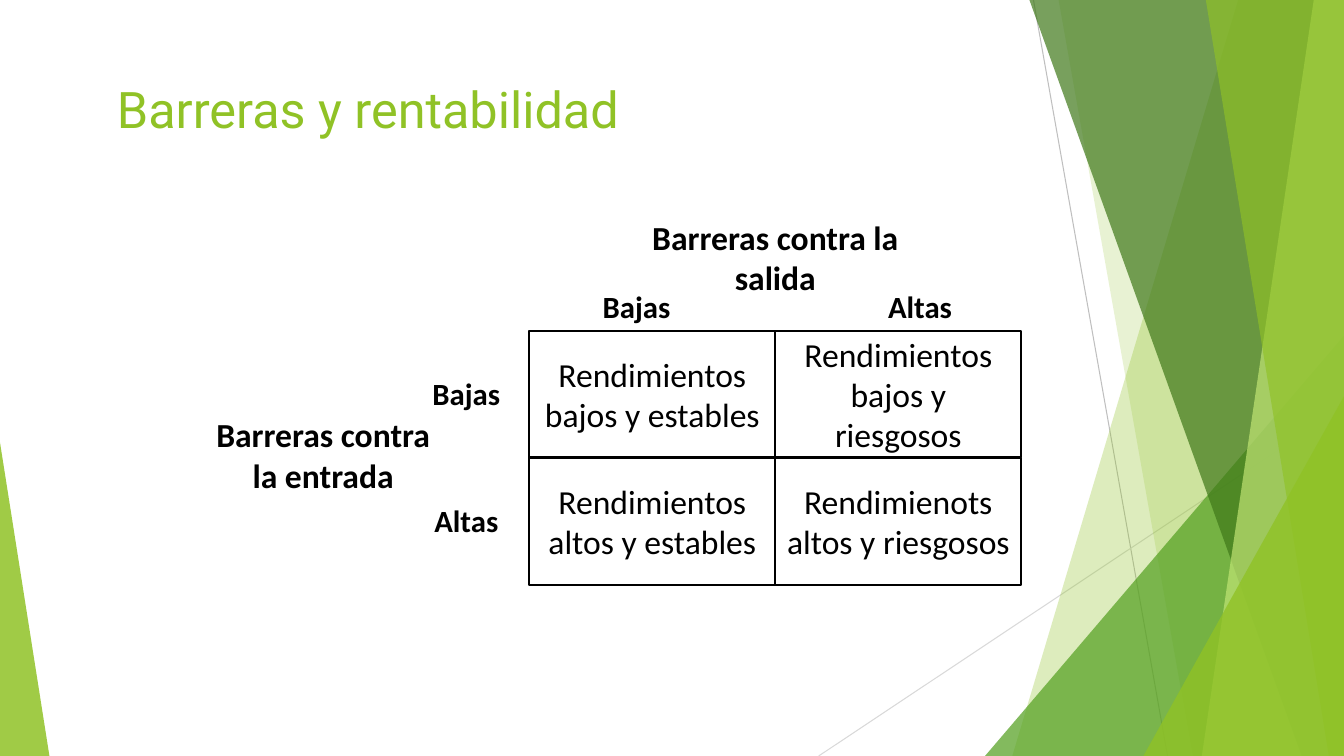
from dataclasses import dataclass

from lxml import etree
from pptx import Presentation
from pptx import util as u
from pptx.dml.color import RGBColor
from pptx.enum import shapes, text
from pptx.oxml.ns import qn

SLIDE_W, SLIDE_H = 13.33, 7.5
GREEN, BLACK, WHITE = "90C226", "000000", "FFFFFF"


@dataclass
class Ray:
    start: tuple[float, float]
    end: tuple[float, float]
    color: str


@dataclass
class Band:
    """Slanted area that reaches the right edge of the slide."""
    top_x: float
    bottom_x: float
    color: str
    opacity: int


@dataclass
class Wedge:
    """Right triangle on the bottom edge, upright at the left (0) or right (1)."""
    left: float
    top: float
    width: float
    apex: int
    color: str
    opacity: int


@dataclass
class Label:
    words: str
    left: float
    top: float
    width: float
    height: float
    size: int = 22
    align: text.PP_ALIGN = text.PP_ALIGN.LEFT
    inset_left: float = 0.1
    inset_right: float = 0.05


RAYS = [
    Ray((10.25, 0), (11.58, SLIDE_H), "BFBFBF"),
    Ray((SLIDE_W, 4.03), (8.12, SLIDE_H), "D9D9D9"),
]
FACETS = [
    Band(12.28, 10.04, GREEN, 30),
    Band(10.5, 11.83, GREEN, 20),
    Wedge(9.77, 3.33, 3.56, 1, "54A021", 72),
    Band(10.21, 12.91, "3F7819", 70),
    Band(13.03, 11.92, "C0E474", 70),
    Band(11.96, 13.18, GREEN, 65),
    Wedge(11.34, 3.93, 1.99, 1, GREEN, 80),
    Wedge(0, 4.39, 0.49, 0, GREEN, 85),
]
MATRIX_LEFT, MATRIX_TOP = 5.25, 3.28
CELL_W, CELL_H = 2.44, 1.26
OUTCOMES = [
    ["Rendimientos bajos y estables", "Rendimientos bajos y riesgosos"],
    ["Rendimientos altos y estables", "Rendimienots altos y riesgosos"],
]
CENTER = text.PP_ALIGN.CENTER
LABELS = [
    Label("Barreras contra la salida", 6.35, 2.1, 2.68, 0.91, 24, CENTER, 0.1, 0.1),
    Label("Bajas", 5.88, 2.81, 1.1, 0.47),
    Label("Altas", 8.71, 2.81, 0.84, 0.47),
    Label("Bajas", 4.19, 3.67, 0.88, 0.47),
    Label("Altas", 4.21, 4.93, 0.84, 0.47),
    Label("Barreras contra la entrada", 2.1, 4.06, 2.21, 1.31, 24, CENTER, 0.04, 0.04),
]


def rgb(color: str) -> RGBColor:
    return RGBColor.from_string(color)


def box(*lengths: float) -> list[int]:
    return [u.Inches(length) for length in lengths]


def write(frame, words: str, size: int, align, font="Calibri", color=BLACK, bold=False) -> None:
    frame.word_wrap = True
    paragraph = frame.paragraphs[0]
    paragraph.alignment = align
    run = paragraph.add_run()
    run.text = words
    run.font.name = font
    run.font.size = u.Pt(size)
    run.font.bold = bold
    run.font.color.rgb = rgb(color)


def draw_ray(slide, ray: Ray) -> None:
    line = slide.shapes.add_connector(
        shapes.MSO_CONNECTOR.STRAIGHT, *box(*ray.start, *ray.end))
    line.line.color.rgb = rgb(ray.color)
    line.line.width = u.Pt(0.75)
    etree.SubElement(line._element.spPr, qn("a:effectLst"))


def draw_facet(slide, facet: Band | Wedge) -> None:
    if isinstance(facet, Band):
        outline = slide.shapes.build_freeform(*box(facet.top_x, 0), scale=1.0)
        corners = [(SLIDE_W, 0), (SLIDE_W, SLIDE_H), (facet.bottom_x, SLIDE_H)]
        outline.add_line_segments([box(*corner) for corner in corners], close=True)
        shape = outline.convert_to_shape()
    else:
        shape = slide.shapes.add_shape(
            shapes.MSO_SHAPE.ISOSCELES_TRIANGLE,
            *box(facet.left, facet.top, facet.width, SLIDE_H - facet.top))
        shape.adjustments[0] = facet.apex
    shape.shadow.inherit = False
    shape.line.fill.background()
    shape.fill.solid()
    shape.fill.fore_color.rgb = rgb(facet.color)
    tint = shape._element.spPr.find(qn("a:solidFill"))[0]
    etree.SubElement(tint, qn("a:alpha"), val=str(facet.opacity * 1000))


def draw_outcome(slide, words: str, row: int, column: int) -> None:
    cell = slide.shapes.add_shape(
        shapes.MSO_SHAPE.RECTANGLE,
        *box(MATRIX_LEFT + column * CELL_W, MATRIX_TOP + row * CELL_H, CELL_W, CELL_H))
    cell.shadow.inherit = False
    cell.fill.solid()
    cell.fill.fore_color.rgb = rgb(WHITE)
    cell.line.color.rgb = rgb(BLACK)
    cell.line.width = u.Pt(1.5)
    cell.text_frame.vertical_anchor = text.MSO_ANCHOR.MIDDLE
    write(cell.text_frame, words, 24, CENTER)


def draw_label(slide, label: Label) -> None:
    frame = slide.shapes.add_textbox(
        *box(label.left, label.top, label.width, label.height)).text_frame
    frame.margin_left = u.Inches(label.inset_left)
    frame.margin_right = u.Inches(label.inset_right)
    write(frame, label.words, label.size, label.align, bold=True)


def main() -> None:
    deck = Presentation()
    deck.slide_width, deck.slide_height = box(SLIDE_W, SLIDE_H)
    slide = deck.slides.add_slide(deck.slide_layouts[5])

    for ray in RAYS:
        draw_ray(slide, ray)
    for facet in FACETS:
        draw_facet(slide, facet)

    title = slide.shapes.title
    title.left, title.top, title.width, title.height = box(1.06, 0.45, 7.97, 1.25)
    title.text_frame.vertical_anchor = text.MSO_ANCHOR.MIDDLE
    write(title.text_frame, "Barreras y rentabilidad", 36, text.PP_ALIGN.LEFT, "Roboto", GREEN)

    for row, outcomes in enumerate(OUTCOMES):
        for column, outcome in enumerate(outcomes):
            draw_outcome(slide, outcome, row, column)
    for label in LABELS:
        draw_label(slide, label)

    deck.save("out.pptx")


if __name__ == "__main__":
    main()
